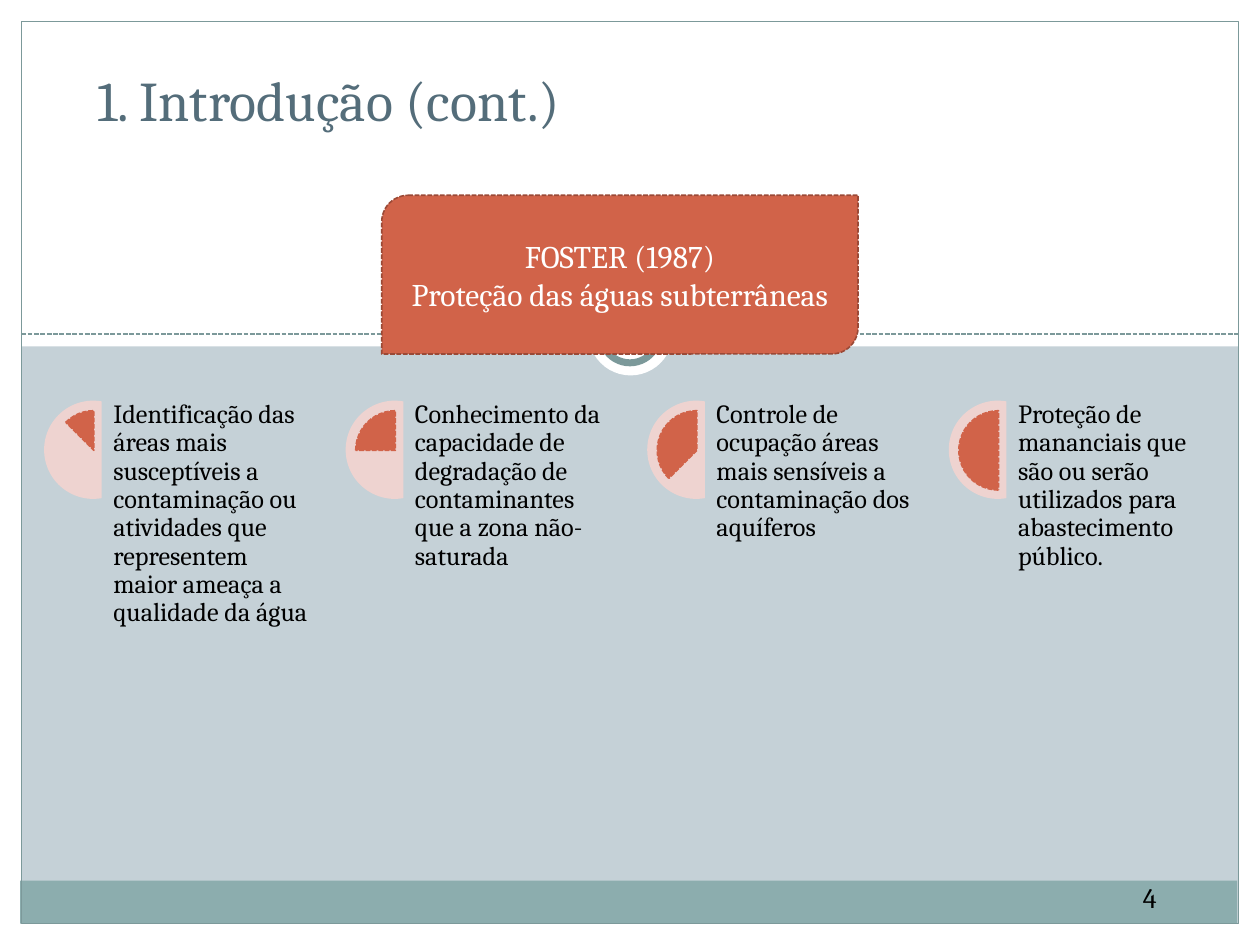
import pptx
import pptx.dml.color
import pptx.enum.dml
import pptx.enum.shapes
import pptx.enum.text
import pptx.util
from pptx.oxml.ns import qn
from pptx.util import Inches
from lxml import etree

RGBColor = pptx.dml.color.RGBColor
SHAPE = pptx.enum.shapes.MSO_SHAPE
ANCHOR = pptx.enum.text.MSO_ANCHOR
ALIGN = pptx.enum.text.PP_ALIGN
SQUARE_DOT = pptx.enum.dml.MSO_LINE.SQUARE_DOT

WHITE = RGBColor(0xFF, 0xFF, 0xFF)
BLACK = RGBColor(0x00, 0x00, 0x00)
BACKGROUND = RGBColor(0xC5, 0xD1, 0xD7)
TEAL = RGBColor(0x8C, 0xAD, 0xAE)
TEAL_LINE = RGBColor(0x7C, 0x99, 0x9A)
SLATE = RGBColor(0x54, 0x6D, 0x7A)
ORANGE = RGBColor(0xD1, 0x63, 0x49)
DARK_ORANGE = RGBColor(0x9B, 0x49, 0x36)
PINK = RGBColor(0xEE, 0xD3, 0xD0)


def add_shape(shapes, kind, place, fill=None, line=None, width=0.9, dashed=False):
    shape = shapes.add_shape(kind, *[Inches(length) for length in place])
    shape.shadow.inherit = False
    if fill is None:
        shape.fill.background()
    else:
        shape.fill.solid()
        shape.fill.fore_color.rgb = fill
    if line is None:
        shape.line.fill.background()
    else:
        shape.line.color.rgb = line
        shape.line.width = pptx.util.Pt(width)
        if dashed:
            shape.line.dash_style = SQUARE_DOT
    return shape


def write(frame, lines, size, color, align=ALIGN.LEFT, anchor=ANCHOR.TOP, inset=None):
    frame.word_wrap = True
    frame.auto_size = pptx.enum.text.MSO_AUTO_SIZE.NONE
    frame.vertical_anchor = anchor
    if inset is not None:
        frame.margin_left = frame.margin_right = Inches(inset)
        frame.margin_top = frame.margin_bottom = Inches(inset)
    for index, line in enumerate(lines):
        para = frame.add_paragraph() if index else frame.paragraphs[0]
        para.alignment = align
        span = para.add_run()
        span.text = line
        span.font.name = "Cambria"
        span.font.size = pptx.util.Pt(size)
        span.font.color.rgb = color


deck = pptx.Presentation()
deck.slide_width = Inches(10)
deck.slide_height = Inches(7.5)
page = deck.slides.add_slide(deck.slide_layouts.get_by_name("Title Only"))
page.background.fill.solid()
page.background.fill.fore_color.rgb = BACKGROUND
shapes = page.shapes

for place, color in [
    ((0, 7.33, 10, 0.17), WHITE),
    ((9.83, 0, 0.17, 7.5), WHITE),
    ((0, 0, 0.17, 7.5), WHITE),
    ((0, 0, 10, 2.75), WHITE),
    ((0.16, 6.99, 9.66, 0.34), TEAL),
]:
    add_shape(shapes, SHAPE.RECTANGLE, place, color)

divider = shapes.add_connector(
    pptx.enum.shapes.MSO_CONNECTOR.STRAIGHT,
    Inches(0.17), Inches(2.65), Inches(9.83), Inches(2.65),
)
divider.line.color.rgb = TEAL_LINE
divider.line.width = pptx.util.Pt(0.9)
divider.line.dash_style = SQUARE_DOT
etree.SubElement(divider.element.spPr, qn("a:effectLst"))

add_shape(shapes, SHAPE.RECTANGLE, (0.17, 0.17, 9.66, 7.16), line=TEAL_LINE, width=0.75)
add_shape(shapes, SHAPE.OVAL, (4.67, 2.31, 0.67, 0.67), WHITE)
add_shape(shapes, SHAPE.OVAL, (4.77, 2.42, 0.46, 0.46), WHITE, TEAL_LINE, 4)

number = shapes.add_textbox(Inches(8.49), Inches(6.92), Inches(1.27), Inches(0.4))
write(number.text_frame, ["4"], 16, BLACK, ALIGN.CENTER, ANCHOR.MIDDLE, 0.05)

title = shapes.title
title.left, title.top = Inches(0.67), Inches(0.5)
title.width, title.height = Inches(8.5), Inches(0.6)
write(title.text_frame, ["1. Introdução (cont.)"], 32, SLATE, anchor=ANCHOR.BOTTOM)
shapes.element.append(title.element)

banner = add_shape(
    shapes, SHAPE.ROUND_2_DIAG_RECTANGLE, (3.03, 1.55, 3.78, 1.26),
    ORANGE, DARK_ORANGE, dashed=True,
)
write(
    banner.text_frame, ["FOSTER (1987)", "Proteção das águas subterrâneas"],
    18, WHITE, ALIGN.CENTER, ANCHOR.MIDDLE,
)

measures = [
    "Identificação das áreas mais susceptíveis a contaminação ou atividades que "
    "representem maior ameaça a qualidade da água",
    "Conhecimento da capacidade de degradação de contaminantes que a zona não-saturada",
    "Controle de ocupação áreas mais sensíveis a contaminação dos aquíferos",
    "Proteção de mananciais que são ou serão utilizados para abastecimento público.",
]
column_pitch = (7.53 - 0.35) / 3
eighth_turn = 27
group = shapes.add_group_shape()
for index, measure in enumerate(measures):
    left = 0.35 + index * column_pitch
    chord = add_shape(group.shapes, SHAPE.CHORD, (left, 3.18, 0.78, 0.78), PINK)
    chord.adjustments[0] = 48
    chord.adjustments[1] = 168
    pie = add_shape(
        group.shapes, SHAPE.PIE, (left + 0.08, 3.26, 0.63, 0.63),
        ORANGE, ORANGE, dashed=True,
    )
    pie.adjustments[0] = 162 - eighth_turn * (index + 1)
    pie.adjustments[1] = 162
    box = group.shapes.add_textbox(
        Inches(left + 0.55), Inches(3.18), Inches(1.56), Inches(3.13)
    )
    write(box.text_frame, [measure], 15, BLACK, inset=0)
    box.text_frame.paragraphs[0].line_spacing = 0.9

deck.save("out.pptx")
